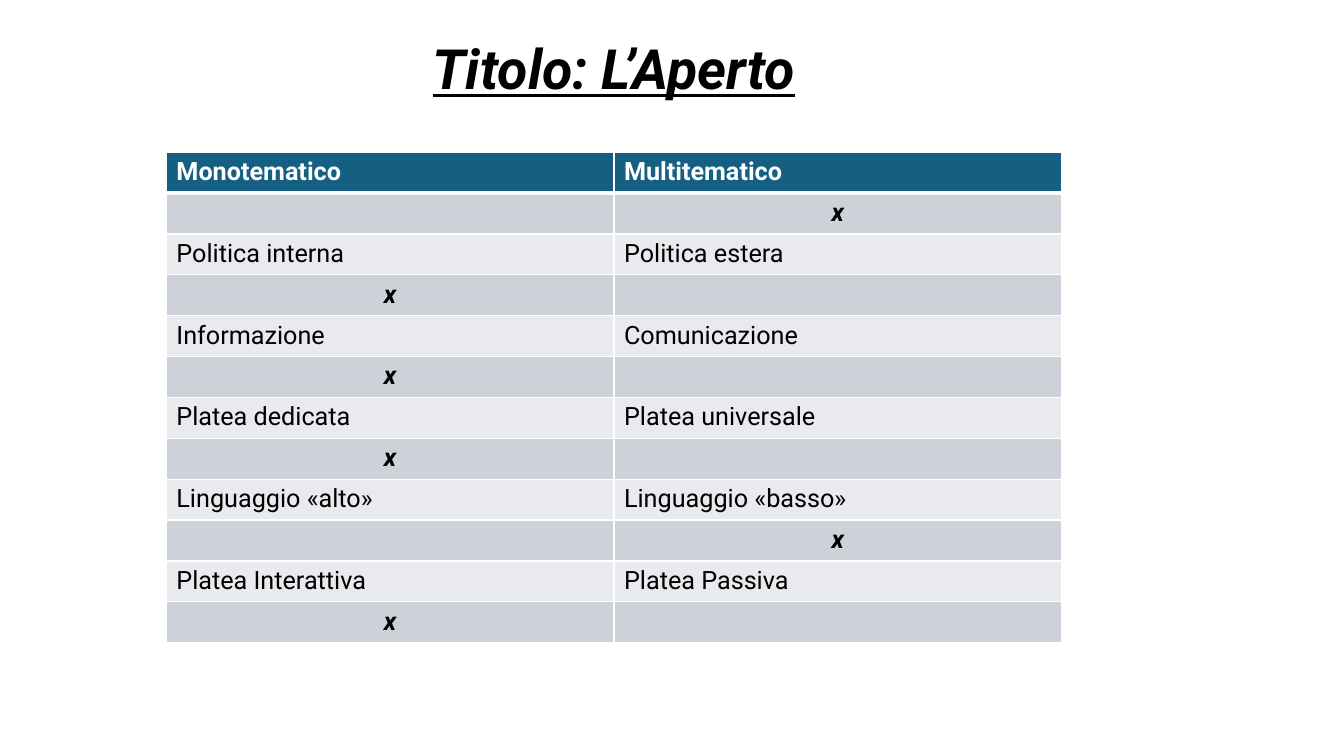
from lxml import etree
from pptx import Presentation
from pptx.dml.color import RGBColor
from pptx.enum.text import MSO_ANCHOR, PP_ALIGN
from pptx.oxml.ns import qn
from pptx.util import Inches, Pt

CENTER = PP_ALIGN.CENTER
LEFT = PP_ALIGN.LEFT
BOTTOM = MSO_ANCHOR.BOTTOM

TITLE = "Titolo: L’Aperto"
MARK = "x"
ROWS = [
    ("Monotematico", "Multitematico"),
    ("", MARK),
    ("Politica interna", "Politica estera"),
    (MARK, ""),
    ("Informazione", "Comunicazione"),
    (MARK, ""),
    ("Platea dedicata", "Platea universale"),
    (MARK, ""),
    ("Linguaggio «alto»", "Linguaggio «basso»"),
    ("", MARK),
    ("Platea Interattiva", "Platea Passiva"),
    (MARK, ""),
]
FONT = "Roboto"
BLACK, WHITE = "000000", "FFFFFF"
HEADER_FILL, MARK_FILL, LABEL_FILL = "156082", "CCD2D8", "E8EAED"
TABLE_LEFT, TABLE_TOP, TABLE_WIDTH, TABLE_HEIGHT = 1.65, 1.51, 8.88, 4.87


def color(value):
    return RGBColor.from_string(value)


def write(frame, text, size, ink, align, bold=False, italic=False, underline=False):
    frame.text = text
    para = frame.paragraphs[0]
    para.alignment = align
    for span in para.runs:
        font = span.font
        font.name, font.size = FONT, Pt(size)
        font.bold, font.italic, font.underline = bold, italic, underline
        font.color.rgb = color(ink)


def add_borders(cell, top, bottom):
    properties = cell._tc.get_or_add_tcPr()
    widths = {"a:lnL": 1, "a:lnR": 1, "a:lnT": top, "a:lnB": bottom}
    for position, (tag, width) in enumerate(widths.items()):
        line = etree.Element(qn(tag), w=str(Pt(width)))
        fill = etree.SubElement(line, qn("a:solidFill"))
        etree.SubElement(fill, qn("a:srgbClr"), val=WHITE)
        properties.insert(position, line)


def add_title(page):
    title = page.shapes.title
    title.left, title.top = Inches(1.96), Inches(0.37)
    title.width, title.height = Inches(8.26), Inches(0.69)
    frame = title.text_frame
    frame.vertical_anchor = BOTTOM
    write(frame, TITLE, 39.6, BLACK, CENTER, True, True, True)
    frame.paragraphs[0].line_spacing = 0.9


def add_comparison(page):
    table = page.shapes.add_table(
        len(ROWS), len(ROWS[0]), Inches(TABLE_LEFT), Inches(TABLE_TOP),
        Inches(TABLE_WIDTH), Inches(TABLE_HEIGHT),
    ).table
    for row, texts in enumerate(ROWS):
        header = row == 0
        fill = HEADER_FILL if header else MARK_FILL if row % 2 else LABEL_FILL
        for column, text in enumerate(texts):
            cell = table.cell(row, column)
            marked = text == MARK
            write(cell.text_frame, text, 18, WHITE if header else BLACK,
                  CENTER if marked else LEFT, header or marked, marked)
            cell.fill.solid()
            cell.fill.fore_color.rgb = color(fill)
            add_borders(cell, 3 if row == 1 else 1, 3 if header else 1)


def main():
    deck = Presentation()
    deck.slide_width, deck.slide_height = Inches(13.33), Inches(7.5)
    page = deck.slides.add_slide(deck.slide_layouts[5])
    add_title(page)
    add_comparison(page)
    deck.save("out.pptx")


if __name__ == "__main__":
    main()
